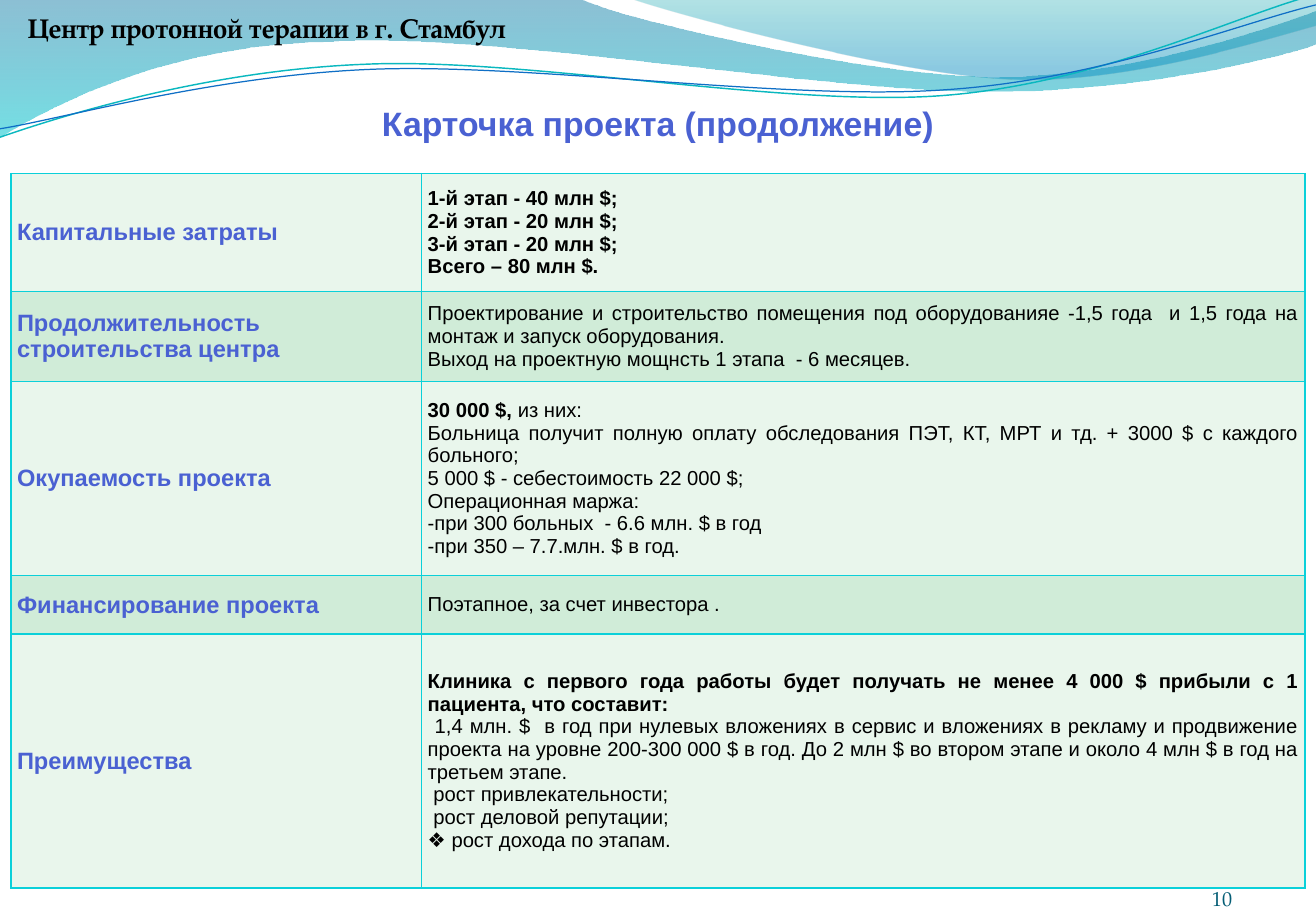
from dataclasses import dataclass

from lxml.etree import SubElement
from pptx import Presentation
from pptx.dml.color import RGBColor
from pptx.enum.text import MSO_ANCHOR, PP_ALIGN
from pptx.oxml.ns import qn
from pptx.util import Inches, Pt


@dataclass(frozen=True)
class Theme:
    sans: str = "Arial"
    serif: str = "TeX Gyre Pagella"
    accent: str = "4A61D2"
    black: str = "000000"
    number: str = "045D75"
    border: str = "0BD0D9"
    bands: tuple = ("E9F6EC", "D0ECD8")
    heading: int = 20
    header: int = 16
    label: int = 14
    body: int = 12


T = Theme()
HEADER = "Центр протонной терапии в г. Стамбул"
TITLE = "Карточка проекта (продолжение)"
NUMBER = "10"

# Each row: label, height, paragraphs of (bold part, plain part, bullet)
ROWS = [
    ("Капитальные затраты", 0.97, [
        ("1-й этап - 40 млн $;", "", ""),
        ("2-й этап - 20 млн $;", "", ""),
        ("3-й этап - 20 млн $;", "", ""),
        ("Всего – 80 млн $.", "", "")]),
    ("Продолжительность строительства центра", 0.74, [
        ("", "Проектирование и строительство помещения под оборудованияе -1,5 года  "
             "и 1,5 года на монтаж и запуск оборудования.", ""),
        ("", "Выход на проектную мощнсть 1 этапа  - 6 месяцев.", "")]),
    ("Окупаемость проекта", 1.6, [
        ("30 000 $,", " из них:", ""),
        ("", "Больница получит полную оплату обследования ПЭТ, КТ, МРТ и тд. "
             "+ 3000 $ c каждого больного;", ""),
        ("", "5 000 $ - себестоимость 22 000 $;", ""),
        ("", "Операционная маржа:", ""),
        ("", "при 300 больных  - 6.6 млн. $ в год", "-"),
        ("", "при 350 – 7.7.млн. $ в год.", "-")]),
    ("Финансирование проекта", 0.48, [
        ("", "Поэтапное, за счет инвестора .", "")]),
    ("Преимущества", 2.09, [
        ("Клиника с первого года работы будет получать не менее 4 000 $ прибыли "
         "с 1 пациента, что составит:", "", ""),
        ("", " 1,4 млн. $  в год при нулевых вложениях в сервис и вложениях в рекламу "
             "и продвижение проекта на уровне 200-300 000 $ в год. До 2 млн $ во втором "
             "этапе и около 4 млн $ в год на третьем этапе.", ""),
        ("", " рост привлекательности;", ""),
        ("", " рост деловой репутации;", ""),
        ("", " рост дохода по этапам.", "❖")]),
]
COLUMNS = (3.38, 7.27)

# Outline steps: 2 numbers for a straight segment, 6 for a Bézier curve.
# Gradient stops: position, colour, opacity in percent.
WAVES = [
    ([(0, 0), (4.77, -0.01), (5.15, 0.17, 7.19, 0.63, 8.22, 0.63),
      (9.24, 0.63, 10.38, 0.26, 10.83, 0.09), (10.84, 0.36),
      (10.65, 0.44, 9.42, 0.76, 8.08, 0.75), (6.74, 0.75, 4.14, 0.28, 2.79, 0.34),
      (1.4, 0.36, 0.5, 0.83, -0.01, 1.13)],
     [(0, "0074A1", 45), (1, "00C6CF", 55)]),
    ([(5.19, -0.01), (5.52, 0.11, 7.39, 0.62, 8.33, 0.65),
      (9.27, 0.69, 10.42, 0.32, 10.83, 0.21), (10.83, 0)],
     [(0, "00A1A9", 30), (0.8, "008BBF", 45)]),
]
STRANDS = [
    ([(0, 1.13), (0.52, 0.95, 1.71, 0.58, 3, 0.53), (4.28, 0.47, 6.42, 0.88, 7.72, 0.79),
      (9.02, 0.7, 10.17, 0.13, 10.81, -0.04)], "0AB8BF", 0.85),
    ([(0, 1.06), (0.51, 0.98, 1.77, 0.62, 3.07, 0.57), (4.36, 0.52, 6.47, 0.83, 7.76, 0.74),
      (9.06, 0.66, 10.2, 0.19, 10.83, 0.04)], "0F6FC6", 0.75),
]


def rgb(color):
    return RGBColor.from_string(color)


def add_outline(slide, steps, close):
    """Draw a freeform, then turn each three segments of a curve step into one Bézier."""
    points = [(Inches(x), Inches(y)) for step in steps
              for x, y in zip(step[::2], step[1::2])]
    builder = slide.shapes.build_freeform(*points[0])
    builder.add_line_segments(points[1:], close=close)
    sp = builder.convert_to_shape()
    sp.shadow.inherit = False
    segments = iter(list(sp._element.iter(qn("a:lnTo"))))
    for step in steps[1:]:
        segment = next(segments)
        if len(step) == 6:
            segment.tag = qn("a:cubicBezTo")
            for _ in range(2):
                extra = next(segments)
                segment.append(extra[0])
                extra.getparent().remove(extra)
    return sp


def add_wave(slide, steps, stops):
    sp = add_outline(slide, steps, True)
    sp.line.fill.background()
    sp.fill.gradient()
    sp.fill.gradient_angle = 270
    for stop, (position, color, _) in zip(sp.fill.gradient_stops, stops):
        stop.position = position
        stop.color.rgb = rgb(color)
    for clr, (_, _, opacity) in zip(sp._element.spPr.iter(qn("a:srgbClr")), stops):
        SubElement(clr, qn("a:alpha"), val=str(opacity * 1000))


def add_strand(slide, steps, color, width):
    sp = add_outline(slide, steps, False)
    sp.fill.background()
    sp.line.color.rgb = rgb(color)
    sp.line.width = Pt(width)


def add_text(p, text, size=T.body, font=T.sans, color=T.black, bold=False,
             align=PP_ALIGN.LEFT, spacing=None):
    r = p.add_run()
    r.text = text
    r.font.size, r.font.name, r.font.bold = Pt(size), font, bold
    r.font.color.rgb = rgb(color)
    p.alignment = align
    if spacing:
        p.line_spacing = spacing


def place(sp, box, inset=0.05, anchor=MSO_ANCHOR.MIDDLE):
    """Position a text shape and return its first paragraph."""
    sp.left, sp.top, sp.width, sp.height = map(Inches, box)
    tf = sp.text_frame
    tf.word_wrap = True
    tf.vertical_anchor = anchor
    tf.margin_left = tf.margin_right = tf.margin_top = tf.margin_bottom = Inches(inset)
    return tf.paragraphs[0]


def set_bullet(p, char):
    pPr = p._p.get_or_add_pPr()
    pPr.set("marL", "0")
    pPr.set("indent", "0")
    SubElement(pPr, qn("a:buSzPct"), val="100000")
    SubElement(pPr, qn("a:buFont"), typeface=T.sans)
    SubElement(pPr, qn("a:buChar"), char=char)


def style_cell(cell, fill):
    cell.vertical_anchor = MSO_ANCHOR.MIDDLE
    cell.margin_left = cell.margin_right = cell.margin_top = cell.margin_bottom = Inches(0.05)
    tcPr = cell._tc.get_or_add_tcPr()
    for side in ("lnL", "lnR", "lnT", "lnB"):
        ln = SubElement(tcPr, qn(f"a:{side}"), w=str(Pt(1)))
        SubElement(SubElement(ln, qn("a:solidFill")), qn("a:srgbClr"), val=T.border)
    cell.fill.solid()
    cell.fill.fore_color.rgb = rgb(fill)


def add_project_table(slide):
    height = sum(row[1] for row in ROWS)
    table = slide.shapes.add_table(len(ROWS), len(COLUMNS), Inches(0.09), Inches(1.43),
                                   Inches(sum(COLUMNS)), Inches(height)).table
    table.first_row = table.horz_banding = False
    for column, width in zip(table.columns, COLUMNS):
        column.width = Inches(width)
    for i, (label, row_height, paragraphs) in enumerate(ROWS):
        table.rows[i].height = Inches(row_height)
        name, details = table.rows[i].cells
        for cell in (name, details):
            style_cell(cell, T.bands[i % 2])
        add_text(name.text_frame.paragraphs[0], label, size=T.label, color=T.accent, bold=True)
        tf = details.text_frame
        for j, (strong, plain, bullet) in enumerate(paragraphs):
            p = tf.add_paragraph() if j else tf.paragraphs[0]
            for text, bold in ((strong, True), (plain, False)):
                if text:
                    add_text(p, text, bold=bold, align=PP_ALIGN.JUSTIFY)
            if bullet:
                set_bullet(p, bullet)


def main():
    prs = Presentation()
    prs.slide_width, prs.slide_height = Inches(10.83), Inches(7.5)
    slide = prs.slides.add_slide(prs.slide_layouts[5])
    for wave in WAVES:
        add_wave(slide, *wave)
    for strand in STRANDS:
        add_strand(slide, *strand)
    add_project_table(slide)

    p = place(slide.shapes.title, (0, 0.83, 10.83, 0.41))
    add_text(p, TITLE, size=T.heading, color=T.accent, bold=True,
             align=PP_ALIGN.CENTER, spacing=0.9)
    p = place(slide.shapes.add_textbox(0, 0, 0, 0), (0.18, 0, 10.65, 0.4))
    add_text(p, HEADER, size=T.header, font=T.serif, bold=True, spacing=1.2)
    p = place(slide.shapes.add_textbox(0, 0, 0, 0), (9.93, 7.21, 0.21, 0.29),
              inset=0, anchor=MSO_ANCHOR.BOTTOM)
    add_text(p, NUMBER, font=T.serif, color=T.number, align=PP_ALIGN.RIGHT)
    prs.save("out.pptx")


if __name__ == "__main__":
    main()
